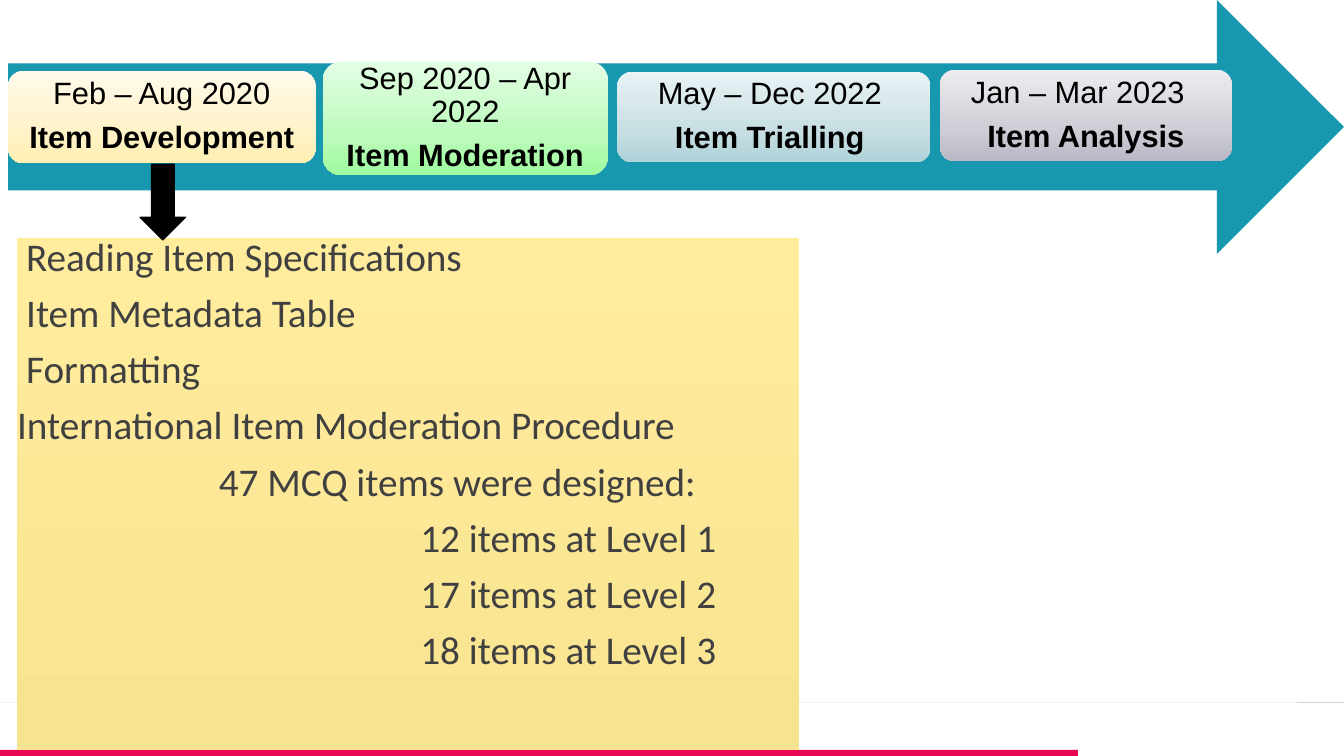
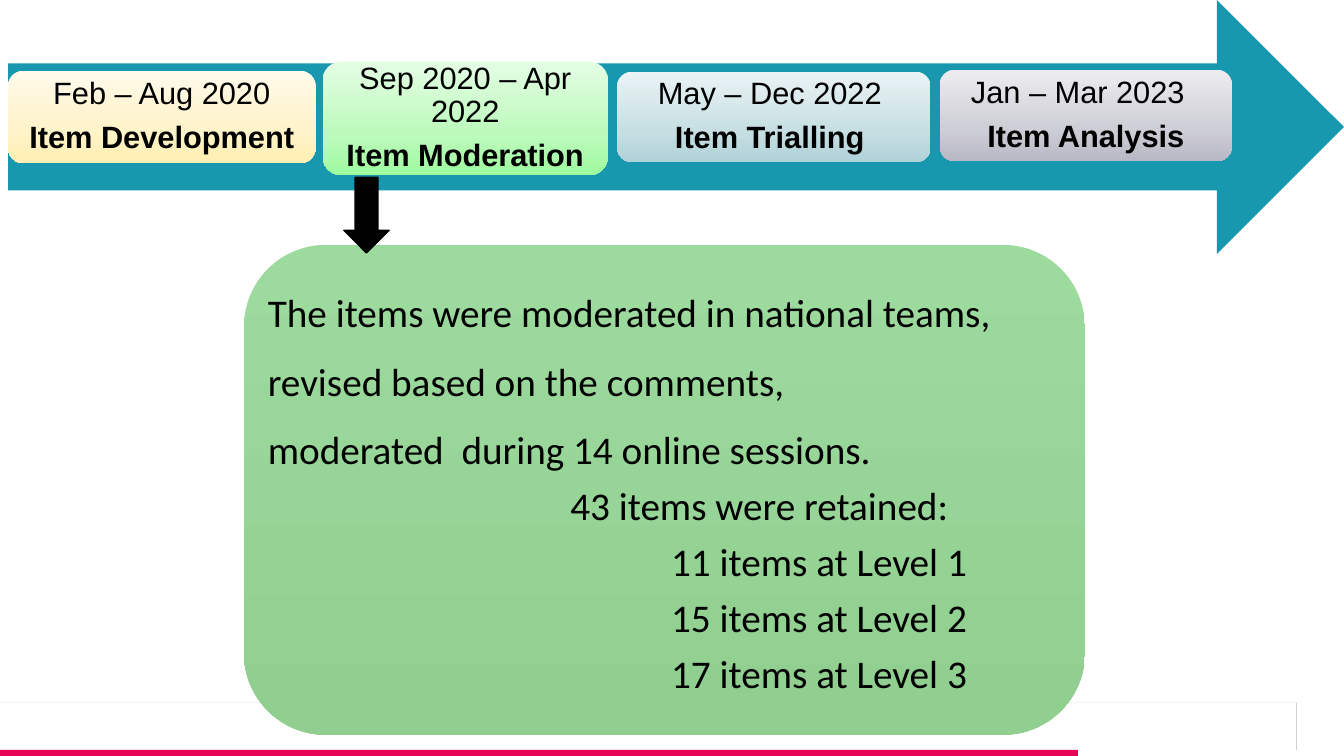
from pptx import Presentation
from pptx.dml.color import RGBColor
from pptx.enum.shapes import MSO_CONNECTOR, MSO_SHAPE
from pptx.enum.text import MSO_ANCHOR, PP_ALIGN
from pptx.oxml import parse_xml
from pptx.oxml.ns import nsdecls, qn
from pptx.util import Inches, Pt

RECT, ROUND = MSO_SHAPE.RECTANGLE, MSO_SHAPE.ROUNDED_RECTANGLE
RIGHT, DOWN = MSO_SHAPE.RIGHT_ARROW, MSO_SHAPE.DOWN_ARROW
LEFT, CENTER = PP_ALIGN.LEFT, PP_ALIGN.CENTER
TOP, MIDDLE = MSO_ANCHOR.TOP, MSO_ANCHOR.MIDDLE

BLACK = RGBColor(0x00, 0x00, 0x00)
DARK = RGBColor(0x40, 0x40, 0x40)
TEAL = RGBColor(0x17, 0x98, 0xAF)
CRIMSON = RGBColor(0xE8, 0x05, 0x54)
PALE = RGBColor(0xF2, 0xF2, 0xF2)
GREY = RGBColor(0xD0, 0xD0, 0xD0)

# Gradients run from top to bottom: (position in percent, colour)
YELLOW = [(0, RGBColor(0xFF, 0xEC, 0x9D)), (100, RGBColor(0xF8, 0xE4, 0x90))]
GREEN = [(0, RGBColor(0x9D, 0xDA, 0x9D)), (100, RGBColor(0x90, 0xCF, 0x90))]
CREAM_CARD = [(0, RGBColor(0xFF, 0xFA, 0xEB)), (65, RGBColor(0xFF, 0xF3, 0xC9)),
              (100, RGBColor(0xFF, 0xEF, 0xB2))]
GREEN_CARD = [(0, RGBColor(0xE4, 0xFE, 0xE4)), (65, RGBColor(0xBC, 0xFA, 0xBC)),
              (100, RGBColor(0x9E, 0xFB, 0x9E))]
BLUE_CARD = [(0, RGBColor(0xEA, 0xF3, 0xF5)), (65, RGBColor(0xC7, 0xDF, 0xE3)),
             (100, RGBColor(0xAF, 0xD2, 0xD9))]
GREY_CARD = [(0, RGBColor(0xED, 0xEC, 0xF0)), (65, RGBColor(0xCE, 0xCE, 0xD6)),
             (100, RGBColor(0xB9, 0xB8, 0xC6))]

SLIDE_W, SLIDE_H = 13.33, 7.5
FOOT_Y, BAND_Y, BAND_W, EDGE_X = 6.97, 7.44, 10.69, 12.86

# Timeline cards: box, gradient, lines of (text, right indent)
STAGES = [
    ((0.08, 0.7, 3.05, 0.92), CREAM_CARD,
     [("Feb – Aug 2020", 0), ("Item Development", 0)]),
    ((3.2, 0.61, 2.83, 1.13), GREEN_CARD,
     [("Sep 2020 – Apr 2022", 0), ("Item Moderation", 0)]),
    ((6.12, 0.71, 3.11, 0.9), BLUE_CARD,
     [("May – Dec 2022", 0.08), ("Item Trialling", 0.08)]),
    ((9.32, 0.69, 2.9, 0.91), GREY_CARD,
     [("Jan – Mar 2023", 0.16), ("Item Analysis", 0)]),
]

# Panel lines: (text, left indent, space after)
SLIDES = [
    {"box": (0.17, 2.36, 7.76, 5.08), "shape": RECT, "fill": YELLOW,
     "color": DARK, "inset": 0, "pointer": (1.39, 1.63),
     "edge": (EDGE_X, FOOT_Y, SLIDE_W, FOOT_Y),
     "lines": [("Reading Item Specifications", 0.09, 9.8),
               ("Item Metadata Table", 0.09, 9.8),
               ("Formatting", 0.09, 9.8),
               ("International Item Moderation Procedure", 0, 9.8),
               ("47 MCQ items were designed:", 2, 9.8),
               ("12 items at Level 1", 4, 9.8),
               ("17 items at Level 2", 4, 9.8),
               ("18 items at Level 3", 4, 9.8)]},
    {"box": (2.42, 2.43, 8.34, 4.86), "shape": ROUND, "fill": GREEN,
     "color": BLACK, "inset": 0.25, "pointer": (3.41, 1.76),
     "edge": (EDGE_X, FOOT_Y, EDGE_X, BAND_Y),
     "lines": [("The items were moderated in national teams,", 0, 18.5),
               ("revised based on the comments,", 0, 18.5),
               ("moderated  during 14 online sessions.", 0, 9.8),
               ("43 items were retained:", 3, 9.8),
               ("11 items at Level 1", 4, 9.8),
               ("15 items at Level 2", 4, 9.8),
               ("17 items at Level 3", 4, 9.8)]},
]


def add_box(s, kind, box, fill):
    """Add a shape with a plain colour or a list of gradient stops."""
    sp = s.shapes.add_shape(kind, *map(Inches, box))
    sp.shadow.inherit = False
    sp.line.fill.background()
    if isinstance(fill, RGBColor):
        sp.fill.solid()
        sp.fill.fore_color.rgb = fill
        return sp
    sp.fill.gradient()
    stops = "".join(f'<a:gs pos="{pos * 1000}"><a:srgbClr val="{color}"/></a:gs>'
                    for pos, color in fill)
    old = sp._element.spPr.find(qn("a:gradFill"))
    old.getparent().replace(old, parse_xml(
        f'<a:gradFill {nsdecls("a")} rotWithShape="1"><a:gsLst>{stops}</a:gsLst>'
        '<a:lin ang="5400000" scaled="0"/></a:gradFill>'))
    return sp


def add_rule(s, ends, color):
    line = s.shapes.add_connector(MSO_CONNECTOR.STRAIGHT, *map(Inches, ends))
    line.line.color.rgb = color
    line.line.width = Pt(0.25)
    line._element.spPr.append(parse_xml(f'<a:effectLst {nsdecls("a")}/>'))


def set_frame(tf, anchor, side, top):
    tf.word_wrap = True
    tf.vertical_anchor = anchor
    tf.margin_left = tf.margin_right = Inches(side)
    tf.margin_top = tf.margin_bottom = Inches(top)


def format_line(p, font, size, color, align, after, left=0, right=0, bold=False):
    p.alignment = align
    p.line_spacing = 0.9
    p.space_before, p.space_after = Pt(0), Pt(after)
    pPr = p._p.get_or_add_pPr()
    pPr.set("marL", str(Inches(left)))
    pPr.set("marR", str(Inches(right)))
    for r in p.runs:
        r.font.name, r.font.size, r.font.bold = font, Pt(size), bold
        r.font.color.rgb = color


def add_footer(s, edge):
    add_box(s, RECT, (0, BAND_Y, BAND_W, SLIDE_H - BAND_Y), CRIMSON)
    add_rule(s, (0, FOOT_Y, EDGE_X, FOOT_Y), PALE)
    add_rule(s, edge, GREY)


def add_panel(s, panel):
    sp = add_box(s, panel["shape"], panel["box"], panel["fill"])
    tf = sp.text_frame
    set_frame(tf, TOP, 0, panel["inset"])
    tf.text = "\n".join(text for text, _, _ in panel["lines"])
    for p, (_, left, after) in zip(tf.paragraphs, panel["lines"]):
        format_line(p, "Calibri", 28, panel["color"], LEFT, after, left=left)


def add_timeline(s):
    add_box(s, RIGHT, (0.08, 0, 13.25, 2.52), TEAL)
    for box, fill, lines in STAGES:
        tf = add_box(s, ROUND, box, fill).text_frame
        set_frame(tf, MIDDLE, 0.09, 0.09)
        tf.text = "\n".join(text for text, _ in lines)
        for i, (p, (_, right)) in enumerate(zip(tf.paragraphs, lines)):
            format_line(p, "Arial", 22, BLACK, CENTER, 7.7, right=right, bold=i == 1)


def add_pointer(s, corner):
    sp = add_box(s, DOWN, (*corner, 0.45, 0.75), BLACK)
    sp.line.color.rgb = BLACK
    sp.line.width = Pt(1)


def main():
    prs = Presentation()
    prs.slide_width, prs.slide_height = Inches(SLIDE_W), Inches(SLIDE_H)
    for content in SLIDES:
        s = prs.slides.add_slide(prs.slide_layouts[6])
        add_footer(s, content["edge"])
        add_panel(s, content)
        add_timeline(s)
        add_pointer(s, content["pointer"])
    prs.save("out.pptx")


if __name__ == "__main__":
    main()
